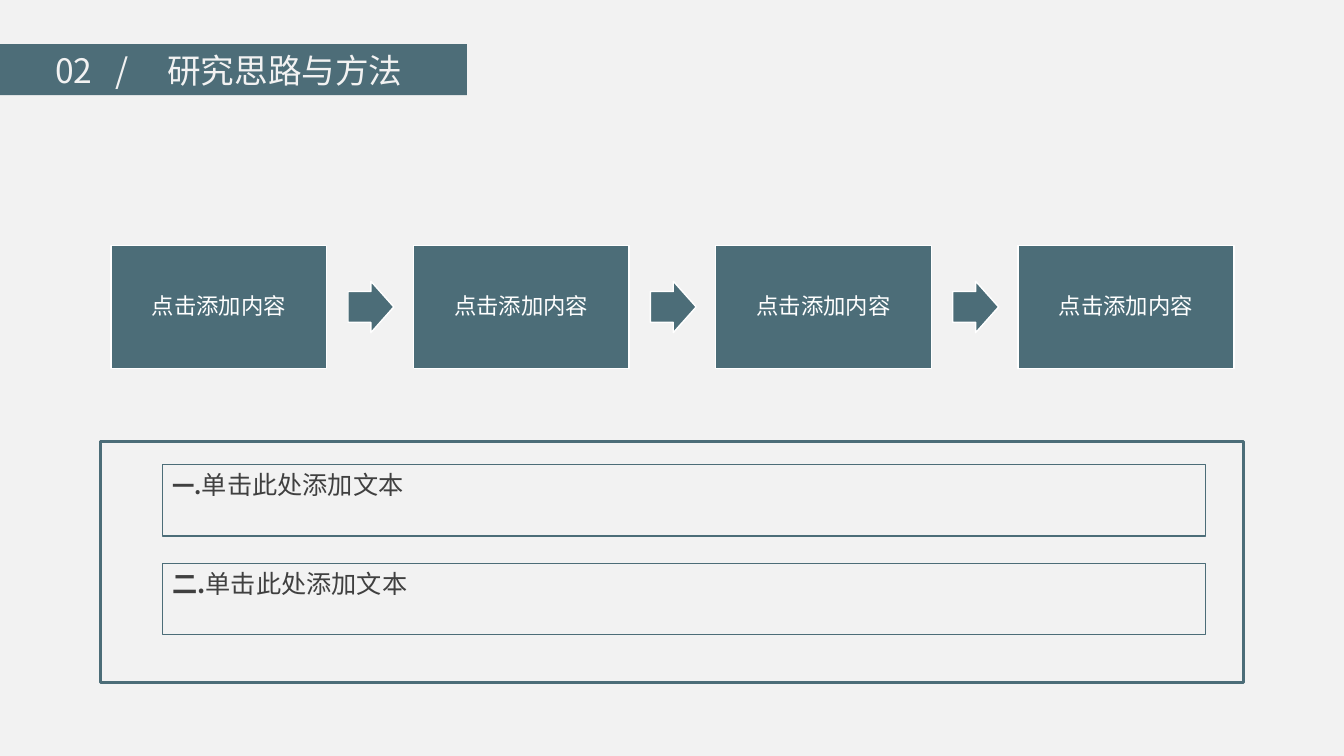
from lxml import etree
from pptx import Presentation
from pptx.dml.color import RGBColor
from pptx.enum import shapes, text
from pptx.oxml.ns import qn
from pptx.util import Pt

FONT = "Noto Sans CJK SC"
TEAL = RGBColor(0x4C, 0x6D, 0x78)
TITLE_TEAL = RGBColor(0x4D, 0x6D, 0x78)
PALE = RGBColor(0xF2, 0xF2, 0xF2)
WHITE = RGBColor(0xFF, 0xFF, 0xFF)
DARK = RGBColor(0x40, 0x40, 0x40)

STEPS = ["点击添加内容"] * 4
STEP_PITCH = 216
# number, its size, line width of the frame
NOTES = [("一.", 16, 1), ("二.", 18, 0.75)]
NOTE_TEXT = "单击此处添加文本"


def add_run(p, words, size, color, bold=False):
    r = p.add_run()
    r.text = words
    r.font.name = FONT
    r.font.size = Pt(size)
    r.font.bold = bold
    r.font.color.rgb = color
    etree.SubElement(r.font._element, qn("a:ea"), typeface=FONT)


def add_block(slide, kind, box, line, width, fill=None):
    sp = slide.shapes.add_shape(kind, *map(Pt, box))
    sp.shadow.inherit = False
    if fill is None:
        sp.fill.background()
    else:
        sp.fill.solid()
        sp.fill.fore_color.rgb = fill
    sp.line.color.rgb = line
    sp.line.width = Pt(width)
    return sp


def set_title(slide):
    sp = slide.shapes.title
    sp.left, sp.top, sp.width, sp.height = map(Pt, (-5, 31.6, 338.5, 36.3))
    sp.fill.solid()
    sp.fill.fore_color.rgb = TITLE_TEAL
    tf = sp.text_frame
    tf.auto_size = text.MSO_AUTO_SIZE.NONE
    tf.vertical_anchor = text.MSO_ANCHOR.MIDDLE
    tf.margin_left = Pt(44.5)
    tf.margin_top = tf.margin_bottom = Pt(0)
    p = tf.paragraphs[0]
    p.alignment = text.PP_ALIGN.LEFT
    p.line_spacing = 1.0
    p.space_before = Pt(0)
    # Tab stops for the slash and the heading
    stops = etree.SubElement(p._p.get_or_add_pPr(), qn("a:tabLst"))
    for stop in (43, 80):
        etree.SubElement(stops, qn("a:tab"), pos=str(Pt(stop)), algn="l")
    add_run(p, "02\t/\t研究思路与方法", 24, PALE)


def add_step(slide, left, words):
    sp = add_block(slide, shapes.MSO_SHAPE.RECTANGLE,
                   (left, 175.2, 154.2, 88.2), WHITE, 1, TEAL)
    tf = sp.text_frame
    tf.word_wrap = True
    tf.vertical_anchor = text.MSO_ANCHOR.MIDDLE
    tf.margin_left = tf.margin_right = Pt(3.4)
    tf.margin_top = tf.margin_bottom = Pt(3.4)
    p = tf.paragraphs[0]
    p.alignment = text.PP_ALIGN.CENTER
    p.line_spacing = 0.9
    add_run(p, words, 16, WHITE)


def add_arrow(slide, left):
    sp = add_block(slide, shapes.MSO_SHAPE.RIGHT_ARROW,
                   (left, 200.9, 32.7, 36.7), WHITE, 1, TEAL)
    sp.adjustments[0] = 0.6
    sp.adjustments[1] = 0.5


def add_note(slide, top, number, size, width):
    sp = add_block(slide, shapes.MSO_SHAPE.RECTANGLE,
                   (116, top, 745.2, 51), TEAL, width)
    tf = sp.text_frame
    tf.word_wrap = True
    tf.vertical_anchor = text.MSO_ANCHOR.TOP
    p = tf.paragraphs[0]
    p.alignment = text.PP_ALIGN.LEFT
    add_run(p, number, size, DARK, bold=True)
    add_run(p, NOTE_TEXT, 18, DARK)


def main():
    prs = Presentation()
    prs.slide_width, prs.slide_height = Pt(960), Pt(540)
    slide = prs.slides.add_slide(prs.slide_layouts[5])
    slide.background.fill.solid()
    slide.background.fill.fore_color.rgb = PALE

    # Title band
    set_title(slide)

    # Process row
    for i, words in enumerate(STEPS):
        left = 79.2 + i * STEP_PITCH
        add_step(slide, left, words)
        if i < len(STEPS) - 1:
            add_arrow(slide, left + 169.4)

    # Framed notes
    for i, note in enumerate(NOTES):
        add_note(slide, 332 + i * 70.4, *note)
    add_block(slide, shapes.MSO_SHAPE.RECTANGLE,
              (72, 315.2, 816.5, 172.3), TEAL, 2.25)

    prs.save("out.pptx")


if __name__ == "__main__":
    main()
